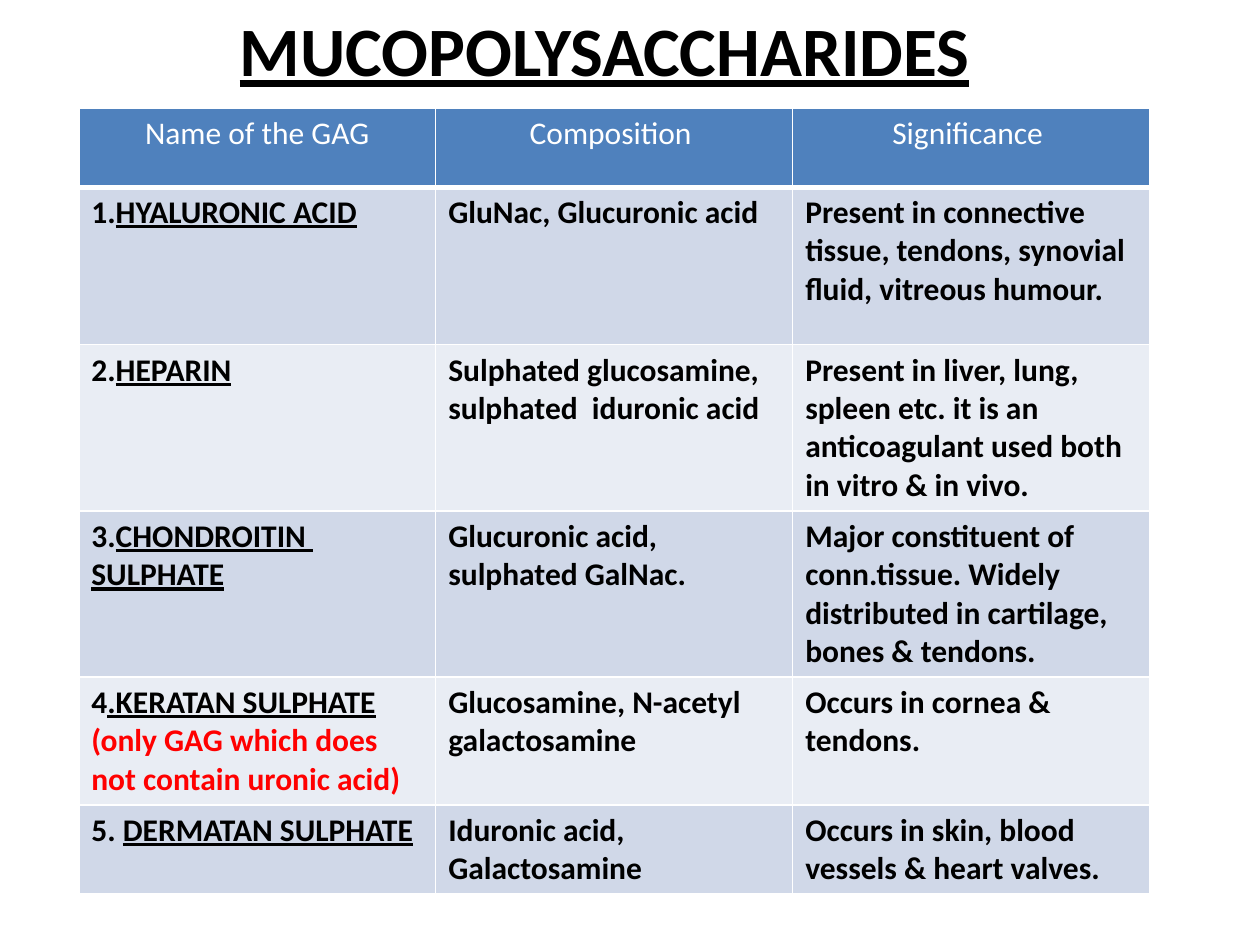
import pptx
import pptx.dml.color
import pptx.enum.text
import pptx.oxml
import pptx.oxml.ns
import pptx.util

Pt = pptx.util.Pt
ALIGN = pptx.enum.text.PP_ALIGN
ANCHOR = pptx.enum.text.MSO_ANCHOR

BLACK, WHITE, RED = "000000", "FFFFFF", "FF0000"
HEADER_FILL = "4F81BD"
BAND_FILLS = ["D0D8E8", "E9EDF4"]

HEADERS = ["Name of the GAG", "Composition ", "Significance "]
# number, name, note, composition, significance
GAGS = [
    ("1.", "HYALURONIC ACID", None, "GluNac, Glucuronic acid",
     "Present in connective tissue, tendons, synovial fluid, vitreous humour."),
    ("2.", "HEPARIN", None, "Sulphated glucosamine, sulphated  iduronic acid",
     "Present in liver, lung, spleen etc. it is an anticoagulant used both in vitro & in vivo."),
    ("3.", "CHONDROITIN  SULPHATE", None, "Glucuronic acid, sulphated GalNac.",
     "Major constituent of conn.tissue. Widely distributed in cartilage, bones & tendons."),
    ("4", ".KERATAN SULPHATE", "(only GAG which does not contain uronic acid)",
     "Glucosamine, N-acetyl galactosamine", "Occurs in cornea & tendons."),
    ("5. ", "DERMATAN SULPHATE", None, "Iduronic acid, Galactosamine",
     "Occurs in skin, blood vessels & heart valves."),
]
ROW_HEIGHTS = [45, 90, 95, 95, 73, 50.5]
COLUMN_WIDTH = 204


def rgb(value):
    return pptx.dml.color.RGBColor.from_string(value)


class Deck:
    """Holds the text style and the current slide."""

    def __init__(self, s, font="Calibri", size=18):
        self.s, self.font, self.size = s, font, size

    def run(self, p, text, color=BLACK, bold=True, underline=False, size=None):
        r = p.add_run()
        r.text = text
        f = r.font
        f.name, f.size = self.font, Pt(size or self.size)
        f.bold, f.underline = bold, underline
        f.color.rgb = rgb(color)

    def title(self, text, left, top, width, height):
        tf = self.s.shapes.add_textbox(Pt(left), Pt(top), Pt(width), Pt(height)).text_frame
        tf.word_wrap = True
        tf.vertical_anchor = ANCHOR.MIDDLE
        p = tf.paragraphs[0]
        p.alignment = ALIGN.CENTER
        self.run(p, text, underline=True, size=39.6)

    def table(self, left, top, column_width, columns, heights):
        table = self.s.shapes.add_table(
            len(heights), columns, Pt(left), Pt(top),
            Pt(column_width * columns), Pt(sum(heights))).table
        for column in table.columns:
            column.width = Pt(column_width)
        for row, height in zip(table.rows, heights):
            row.height = Pt(height)
        return table

    def cell(self, cell, fill, bottom=1):
        """Give the cell white borders and a fill, and return its first paragraph."""
        tc_pr = cell._tc.get_or_add_tcPr()
        for side, width in zip("LRTB", [1, 1, 1, bottom]):
            tc_pr.append(pptx.oxml.parse_xml(
                f'<a:ln{side} {pptx.oxml.ns.nsdecls("a")} w="{Pt(width)}"><a:solidFill>'
                f'<a:srgbClr val="{WHITE}"/></a:solidFill></a:ln{side}>'))
        cell.fill.solid()
        cell.fill.fore_color.rgb = rgb(fill)
        return cell.text_frame.paragraphs[0]


def main():
    prs = pptx.Presentation()
    prs.slide_width, prs.slide_height = Pt(720), Pt(540)
    deck = Deck(prs.slides.add_slide(prs.slide_layouts[6]))

    deck.title("MUCOPOLYSACCHARIDES", 39.5, 0, 612, 56)
    table = deck.table(45, 62, COLUMN_WIDTH, len(HEADERS), ROW_HEIGHTS)

    for column, header in enumerate(HEADERS):
        p = deck.cell(table.cell(0, column), HEADER_FILL, bottom=3)
        p.alignment = ALIGN.CENTER
        deck.run(p, header, WHITE, bold=False)

    for row, (number, name, note, *details) in enumerate(GAGS, 1):
        fill = BAND_FILLS[(row - 1) % 2]
        name_cell = table.cell(row, 0)
        p = deck.cell(name_cell, fill)
        deck.run(p, number)
        deck.run(p, name, underline=True)
        if note:
            deck.run(name_cell.text_frame.add_paragraph(), note, RED)
        for column, detail in enumerate(details, 1):
            deck.run(deck.cell(table.cell(row, column), fill), detail)

    prs.save("out.pptx")


if __name__ == "__main__":
    main()
